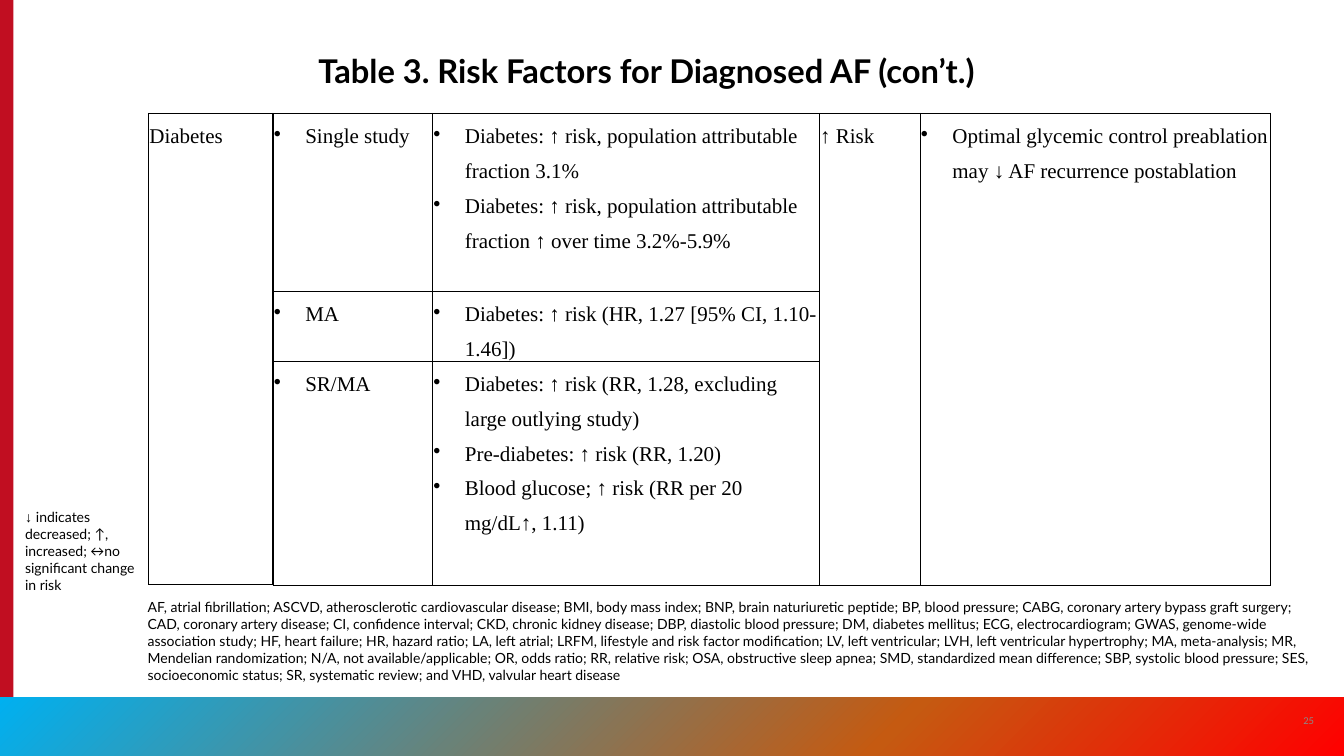
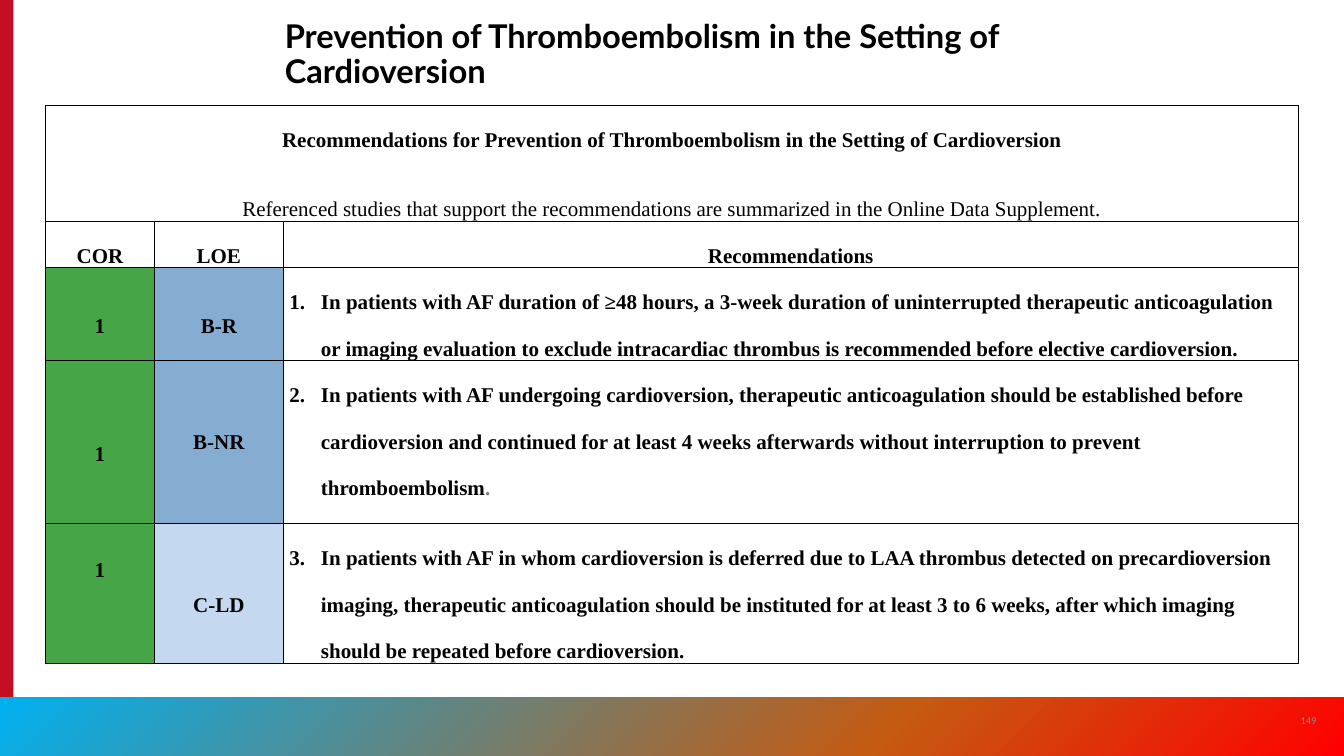
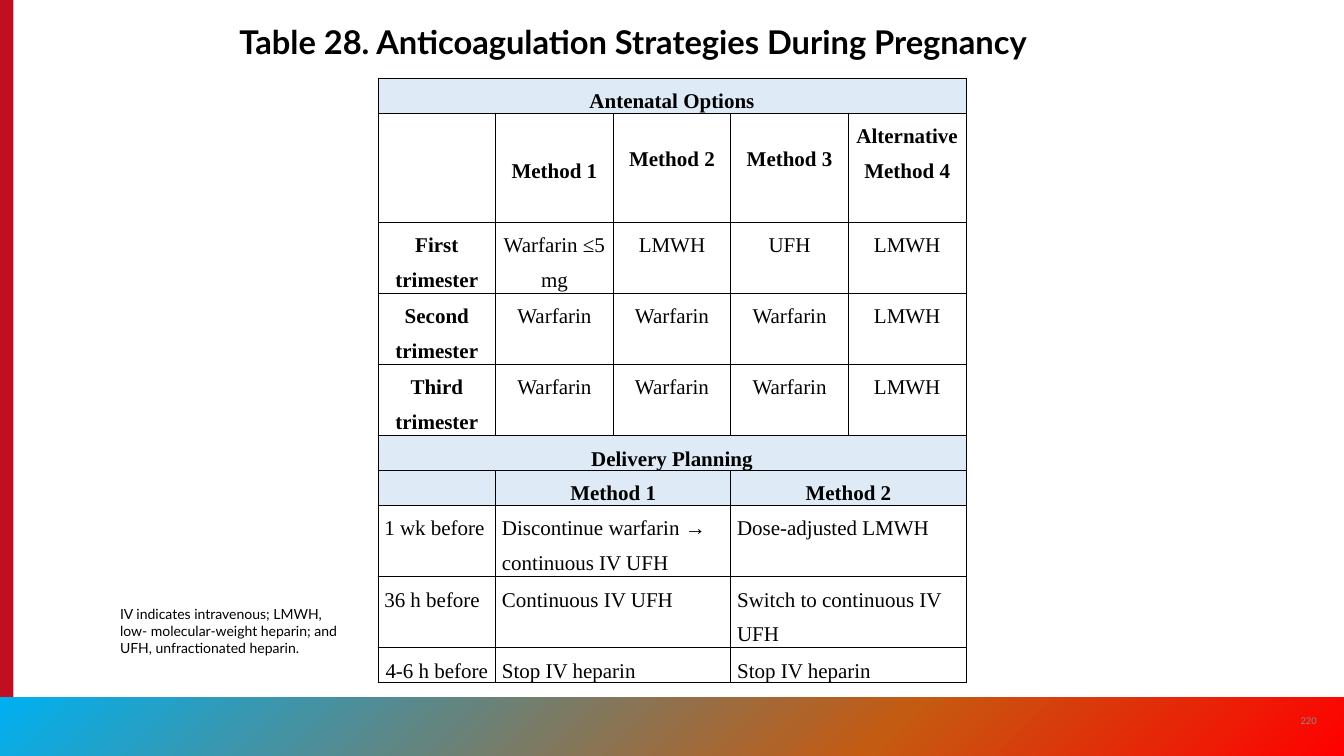
from copy import deepcopy
from dataclasses import dataclass
from typing import Any, NamedTuple

from lxml.etree import SubElement
from pptx import Presentation
from pptx.dml.color import RGBColor
from pptx.enum.shapes import MSO_SHAPE as Shape
from pptx.enum.text import MSO_ANCHOR as Anchor, MSO_AUTO_SIZE as AutoSize, PP_ALIGN as Align
from pptx.oxml.ns import qn
from pptx.util import Pt

PAGE_WIDTH, PAGE_HEIGHT = 1152, 648
FOOTER_TOP, FOOTER_HEIGHT = 597.6, 50.4
TITLE_ONLY = 5
BLACK, RED, GREY, PERIOD_GREY = "000000", "C10E21", "8A8B8A", "7F7F7F"
GREEN, BLUE, LIGHT_BLUE, HEADING_BLUE = "45A547", "85ADD1", "C4D9F0", "DEEAF6"
FOOTER_STOPS = ((0, "00B0F0"), (0.66, "C55A11"), (1, "FF0000"))
SANS, SERIF = "Lato", "Times New Roman"
HANGING = 27


class Area(NamedTuple):
    left: float
    top: float
    width: float
    height: float

    def lengths(self) -> list:
        return [Pt(value) for value in self]


@dataclass(frozen=True)
class Run:
    text: str
    bold: bool = False
    colour: str = BLACK
    font: str = SERIF
    size: float = 18


@dataclass(frozen=True)
class Cell:
    lines: tuple = ()
    align: Align = Align.LEFT
    anchor: Anchor = Anchor.TOP
    bullet: bool = False
    number: int = 0
    gap: float = 0
    pad_top: float = 0
    pad_bottom: float = 0
    fill: str = ""
    rows: int = 1
    columns: int = 1


@dataclass(frozen=True)
class Grid:
    left: float
    top: float
    columns: tuple
    rows: tuple
    cells: tuple
    inset: float = 5.4
    leading: float = 1.5


def colour_of(value: str) -> RGBColor:
    return RGBColor.from_string(value)


def set_values(target: Any, values: dict) -> None:
    for name, value in values.items():
        setattr(target, name, value)


def add_run(para: Any, run: Run) -> None:
    span = para.add_run()
    span.text = run.text
    set_values(span.font, {"name": run.font, "size": Pt(run.size), "bold": run.bold})
    span.font.color.rgb = colour_of(run.colour)


def plain(*texts: str, **options: Any) -> Cell:
    return Cell(tuple((Run(text),) for text in texts), **options)


def strong(*texts: str, **options: Any) -> Cell:
    return Cell(tuple((Run(text, bold=True),) for text in texts), **options)


def centred(*texts: str, **options: Any) -> Cell:
    return plain(*texts, align=Align.CENTER, **options)


def heading(*texts: str, **options: Any) -> Cell:
    return strong(*texts, align=Align.CENTER, **options)


def bullets(*texts: str, **options: Any) -> Cell:
    return plain(*texts, bullet=True, **options)


def rating(text: str, fill: str, pad_bottom: float = 0) -> Cell:
    return heading(text, fill=fill, anchor=Anchor.MIDDLE, pad_bottom=pad_bottom)


def add_marker(para: Any, cell: Cell) -> None:
    """Give the paragraph a hanging bullet or number."""
    props = para._p.get_or_add_pPr()
    props.set("marL", str(Pt(HANGING)))
    props.set("indent", str(-Pt(HANGING)))
    if cell.number:
        SubElement(props, qn("a:buAutoNum"), type="arabicPeriod", startAt=str(cell.number))
    else:
        SubElement(props, qn("a:buChar"), char="•")


def add_borders(box: Any) -> None:
    props = box._tc.get_or_add_tcPr()
    for side in ("lnL", "lnR", "lnT", "lnB"):
        line = SubElement(props, qn(f"a:{side}"), w=str(Pt(1)))
        SubElement(SubElement(line, qn("a:solidFill")), qn("a:srgbClr"), val=BLACK)


def fill_cell(box: Any, cell: Cell, grid: Grid) -> None:
    add_borders(box)
    if cell.fill:
        box.fill.solid()
        box.fill.fore_color.rgb = colour_of(cell.fill)
    else:
        box.fill.background()
    set_values(box, {
        "margin_left": Pt(grid.inset), "margin_right": Pt(grid.inset),
        "margin_top": Pt(cell.pad_top), "margin_bottom": Pt(cell.pad_bottom),
        "vertical_anchor": cell.anchor,
    })
    for index, line in enumerate(cell.lines):
        para = box.text_frame.add_paragraph() if index else box.text_frame.paragraphs[0]
        if cell.bullet or cell.number:
            add_marker(para, cell)
        set_values(para, {"alignment": cell.align, "line_spacing": grid.leading})
        if index and cell.gap:
            para.space_before = Pt(cell.gap)
        for run in line:
            add_run(para, run)


def add_grid(page: Any, grid: Grid) -> None:
    area = Area(grid.left, grid.top, sum(grid.columns), sum(grid.rows))
    table = page.shapes.add_table(len(grid.rows), len(grid.columns), *area.lengths()).table
    set_values(table, {"first_row": False, "horz_banding": False})
    for column, width in zip(table.columns, grid.columns):
        column.width = Pt(width)
    for row, height in zip(table.rows, grid.rows):
        row.height = Pt(height)
    for i, row_cells in enumerate(grid.cells):
        for j, cell in enumerate(row_cells):
            box = table.cell(i, j)
            fill_cell(box, cell or Cell(), grid)
            if cell and cell.rows * cell.columns > 1:
                box.merge(table.cell(i + cell.rows - 1, j + cell.columns - 1))


def add_band(page: Any, area: Area) -> Any:
    band = page.shapes.add_shape(Shape.RECTANGLE, *area.lengths())
    band.shadow.inherit = False
    band.line.fill.background()
    return band


def add_footer(page: Any) -> None:
    footer = add_band(page, Area(0, FOOTER_TOP, PAGE_WIDTH, FOOTER_HEIGHT))
    footer.fill.gradient()
    footer.fill.gradient_angle = 315
    stops = footer.element.spPr.find(qn("a:gradFill")).find(qn("a:gsLst"))
    stops.append(deepcopy(stops[-1]))
    for stop, (position, colour) in zip(footer.fill.gradient_stops, FOOTER_STOPS):
        stop.position = position
        stop.color.rgb = colour_of(colour)


def add_text(page: Any, area: Area, *runs: Run, align: Align = Align.LEFT,
             anchor: Anchor = Anchor.TOP, fit: AutoSize = AutoSize.SHAPE_TO_FIT_TEXT) -> None:
    frame = page.shapes.add_textbox(*area.lengths()).text_frame
    set_values(frame, {"word_wrap": True, "auto_size": fit, "vertical_anchor": anchor})
    para = frame.paragraphs[0]
    para.alignment = align
    for run in runs:
        add_run(para, run)


def note(text: str, font: str = SANS) -> Run:
    return Run(text, font=font, size=12)


def add_page(deck: Any, title: str, area: Area, number: int) -> Any:
    """Add a slide with the shared bands, its title and its page number."""
    page = deck.slides.add_slide(deck.slide_layouts[TITLE_ONLY])
    side = add_band(page, Area(0, 0, 11.5, PAGE_HEIGHT))
    side.fill.solid()
    side.fill.fore_color.rgb = colour_of(RED)
    add_footer(page)
    add_text(page, Area(1104.5, 600.5, 34.5, 34.5),
             Run(str(number), colour=GREY, font=SANS, size=8),
             align=Align.CENTER, anchor=Anchor.MIDDLE, fit=AutoSize.NONE)
    box = page.shapes.title
    set_values(box, dict(zip(("left", "top", "width", "height"), area.lengths())))
    set_values(box.text_frame, {"word_wrap": True, "auto_size": AutoSize.NONE,
                                "vertical_anchor": Anchor.BOTTOM})
    para = box.text_frame.paragraphs[0]
    set_values(para, {"alignment": Align.LEFT, "line_spacing": 0.9})
    add_run(para, Run(title, bold=True, font=SANS, size=28))
    return page


RISK_TOP = 97.2
RISK_ROWS = (152.5, 59.5, 192)
STUDIES = Grid(234, RISK_TOP, (136.8, 331.5, 86.4, 300), RISK_ROWS, (
    (bullets("Single study"),
     bullets("Diabetes: ↑ risk, population attributable fraction 3.1%",
             "Diabetes: ↑ risk, population attributable fraction ↑ over time 3.2%-5.9%"),
     plain("↑ Risk", rows=3),
     bullets("Optimal glycemic control preablation may ↓ AF recurrence postablation", rows=3)),
    (bullets("MA"), bullets("Diabetes: ↑ risk (HR, 1.27 [95% CI, 1.10-1.46])"), None, None),
    (bullets("SR/MA"),
     bullets("Diabetes: ↑ risk (RR, 1.28, excluding large outlying study)",
             "Pre-diabetes: ↑ risk (RR, 1.20)",
             "Blood glucose; ↑ risk (RR per 20 mg/dL↑, 1.11)"), None, None),
), inset=0.7)
FACTOR = Grid(127.4, RISK_TOP, (106.6,), (sum(RISK_ROWS),), ((plain("Diabetes"),),), inset=0.7)

ABBREVIATIONS = "; ".join((
    "AF, atrial fibrillation; ASCVD, atherosclerotic cardiovascular disease; BMI, body mass index",
    "BNP, brain naturiuretic peptide; BP, blood pressure; CABG, coronary artery bypass graft surgery",
    "CAD, coronary artery disease; CI, confidence interval; CKD, chronic kidney disease",
    "DBP, diastolic blood pressure; DM, diabetes mellitus; ECG, electrocardiogram",
    "GWAS, genome-wide association study; HF, heart failure; HR, hazard ratio; LA, left atrial",
    "LRFM, lifestyle and risk factor modification; LV, left ventricular",
    "LVH, left ventricular hypertrophy; MA, meta-analysis; MR, Mendelian randomization",
    "N/A, not available/applicable; OR, odds ratio; RR, relative risk; OSA, obstructive sleep apnea",
    "SMD, standardized mean difference; SBP, systolic blood pressure; SES, socioeconomic status",
    "SR, systematic review; and VHD, valvular heart disease",
))

RECOMMENDATIONS = Grid(38.9, 90, (93.6, 110.2, 870.2), (99.5, 39.5, 79.7, 139.7, 120), (
    (Cell(((Run("Recommendations for Prevention of Thromboembolism in the Setting of Cardioversion",
                bold=True),),
           (Run("Referenced studies that support the recommendations are summarized in the "
                "Online Data Supplement."),)),
          align=Align.CENTER, gap=20, columns=3), None, None),
    (heading("COR"), heading("LOE"), heading("Recommendations")),
    (rating("1", GREEN), rating("B-R", BLUE),
     strong("In patients with AF duration of ≥48 hours, a 3-week duration of uninterrupted "
            "therapeutic anticoagulation or imaging evaluation to exclude intracardiac thrombus "
            "is recommended before elective cardioversion.", number=1)),
    (rating("1", GREEN), rating("B-NR", BLUE, pad_bottom=20),
     Cell(((Run("In patients with AF undergoing cardioversion, therapeutic anticoagulation should "
                "be established before cardioversion and continued for at least 4 weeks afterwards "
                "without interruption to prevent thromboembolism", bold=True),
            Run(".", bold=True, colour=PERIOD_GREY)),), number=2)),
    (rating("1", GREEN, pad_bottom=60), rating("C-LD", LIGHT_BLUE),
     strong("In patients with AF in whom cardioversion is deferred due to LAA thrombus detected on "
            "precardioversion imaging, therapeutic anticoagulation should be instituted for at "
            "least 3 to 6 weeks, after which imaging should be repeated before cardioversion.",
            number=3)),
), leading=2)


def trimester(name: str, *drugs: str) -> tuple:
    return (heading(f"{name} trimester"), *(centred(drug) for drug in drugs))


def delivery(time: Cell, first: str, second: str) -> tuple:
    return (time, plain(first, columns=2), None, plain(second, columns=2), None)


def section(name: str) -> tuple:
    return (heading(name, fill=HEADING_BLUE, columns=5), None, None, None, None)


ONE_LINE, TWO_LINES = 30, 61
STRATEGIES = Grid(
    324, 67, (100.8,) * 5,
    (ONE_LINE, 93.5, *(TWO_LINES,) * 3, ONE_LINE, ONE_LINE, TWO_LINES, TWO_LINES, ONE_LINE), (
        section("Antenatal Options"),
        (None, heading("Method 1", pad_top=30), heading("Method 2", pad_top=20),
         heading("Method 3", pad_top=20), heading("Alternative", "Method 4")),
        trimester("First", "Warfarin ≤5 mg", "LMWH", "UFH", "LMWH"),
        trimester("Second", *("Warfarin",) * 3, "LMWH"),
        trimester("Third", *("Warfarin",) * 3, "LMWH"),
        section("Delivery Planning"),
        (Cell(fill=HEADING_BLUE), heading("Method 1", fill=HEADING_BLUE, columns=2), None,
         heading("Method 2", fill=HEADING_BLUE, columns=2), None),
        delivery(plain("1 wk before"), "Discontinue warfarin → continuous IV UFH",
                 "Dose-adjusted LMWH"),
        delivery(plain("36 h before"), "Continuous IV UFH", "Switch to continuous IV UFH"),
        delivery(centred("4-6 h before"), "Stop IV heparin", "Stop IV heparin"),
    ))


def main() -> None:
    deck = Presentation()
    set_values(deck, {"slide_width": Pt(PAGE_WIDTH), "slide_height": Pt(PAGE_HEIGHT)})

    page = add_page(deck, "Table 3. Risk Factors for Diagnosed AF (con’t.)",
                    Area(265.7, 39.6, 620.6, 41.8), 25)
    add_grid(page, STUDIES)
    add_grid(page, FACTOR)
    add_text(page, Area(14.4, 432.7, 113, 80), note("↓ ", "Arial"),
             note("indicates decreased; ↑, increased; ↔no significant change in risk"))
    add_text(page, Area(119.5, 509.8, 1020.2, 80), note(ABBREVIATIONS))

    page = add_page(deck, "Prevention of Thromboembolism in the Setting of Cardioversion",
                    Area(236.9, 9.4, 678.2, 72), 149)
    add_grid(page, RECOMMENDATIONS)

    page = add_page(deck, "Table 28. Anticoagulation Strategies During Pregnancy",
                    Area(198, 12.2, 756, 44), 220)
    add_grid(page, STRATEGIES)
    add_text(page, Area(95.8, 515.5, 203.8, 65.5),
             note("IV indicates intravenous; LMWH, low- molecular-weight heparin; "
                  "and UFH, unfractionated heparin."))

    deck.save("out.pptx")


if __name__ == "__main__":
    main()
